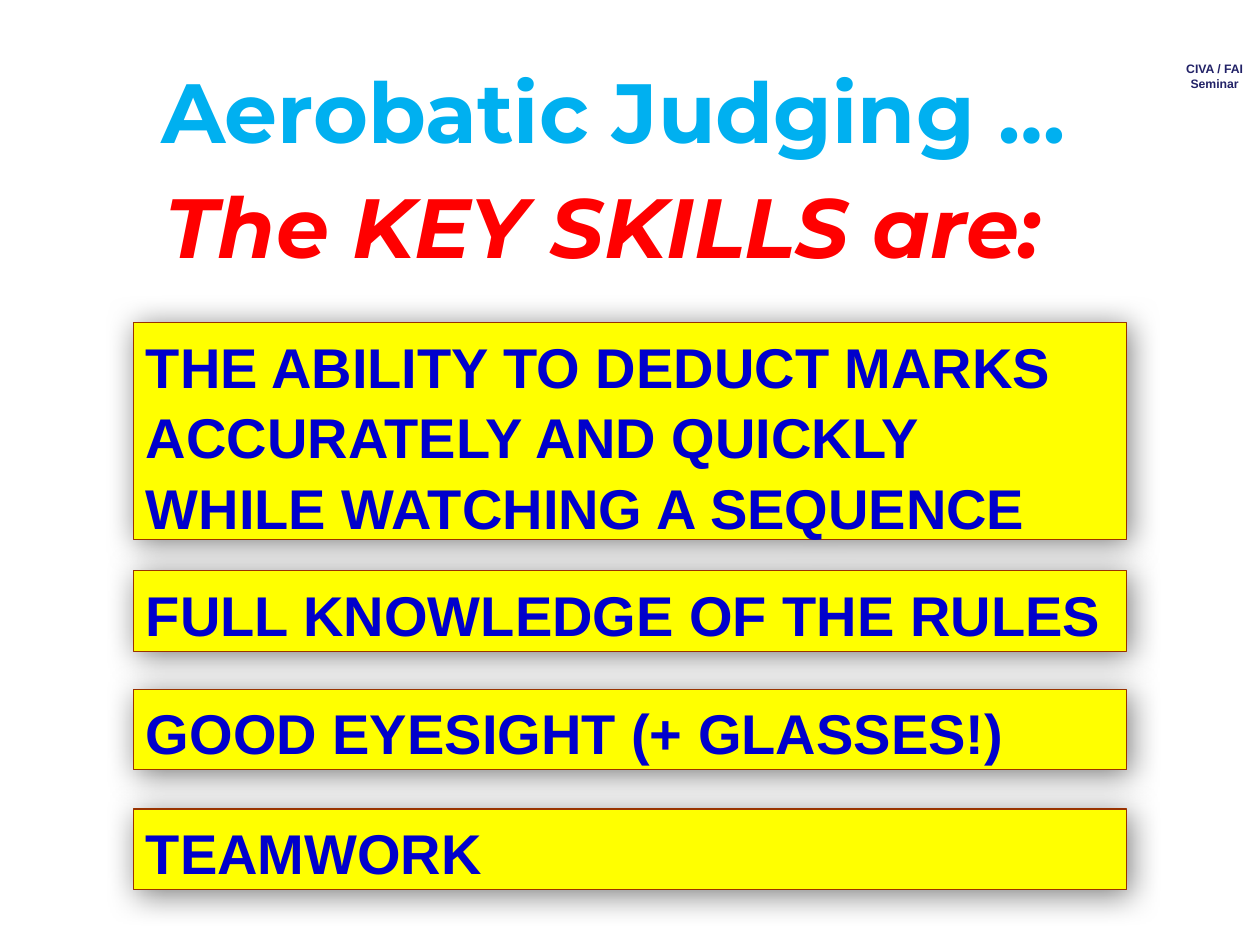
from lxml import etree
from pptx import Presentation
from pptx.dml.color import RGBColor
from pptx.enum import shapes, text
from pptx.oxml.ns import qn
from pptx.util import Inches, Pt

COLORS = {
    "heading": "00B0F0",
    "subheading": "FF0000",
    "panel": "FFFF00",
    "border": "993300",
    "skill": "0000CC",
    "shadow": "808080",
    "seminar": "222267",
    "seminar_shadow": "C0C0C0",
}


def rgb(name):
    return RGBColor.from_string(COLORS[name])


def style(paragraph, size, color, face="Arial", italic=False):
    font = paragraph.font
    font.name, font.size, font.bold, font.italic = face, Pt(size), True, italic
    font.color.rgb = rgb(color)


def add_shadow(properties, color, blur, distance):
    for effects in properties.findall(qn("a:effectLst")):
        properties.remove(effects)
    effects = etree.Element(qn("a:effectLst"))
    shadow = etree.SubElement(effects, qn("a:outerShdw"), blurRad=str(Pt(blur)),
                              dist=str(Pt(distance)), dir=str(45 * 60000),
                              algn="ctr", rotWithShape="0")
    etree.SubElement(shadow, qn("a:srgbClr"), val=COLORS[color])
    properties.append(effects)


def add_heading(slide, box, words, color, italic=False):
    frame = slide.shapes.add_textbox(*map(Inches, box)).text_frame
    frame.word_wrap = True
    frame.vertical_anchor = text.MSO_ANCHOR.MIDDLE
    heading = frame.paragraphs[0]
    heading.text = words
    heading.alignment = text.PP_ALIGN.CENTER
    style(heading, 48, color, "Montserrat", italic)


def add_seminar_label(slide, box):
    frame = slide.shapes.add_textbox(*map(Inches, box)).text_frame
    frame.word_wrap = False
    frame.text = "CIVA / FAI\nSeminar"
    for line in frame.paragraphs:
        line.alignment = text.PP_ALIGN.CENTER
        style(line, 7, "seminar")
        for run in line.runs:
            add_shadow(run.font._element, "seminar_shadow", 1, 1.5)


def add_skill(slide, box, words):
    panel = slide.shapes.add_shape(shapes.MSO_SHAPE.RECTANGLE, *map(Inches, box))
    panel.fill.solid()
    panel.fill.fore_color.rgb = rgb("panel")
    panel.line.color.rgb = rgb("border")
    panel.line.width = Pt(0.75)
    add_shadow(panel._element.spPr, "shadow", 18, 2.8)
    frame = panel.text_frame
    frame.word_wrap = True
    frame.vertical_anchor = text.MSO_ANCHOR.TOP
    frame.margin_right = Inches(0.15)
    skill = frame.paragraphs[0]
    skill.text = words
    skill.alignment = text.PP_ALIGN.LEFT
    skill.line_spacing = 1.05
    style(skill, 32, "skill")


def main():
    deck = Presentation()
    deck.slide_width, deck.slide_height = Inches(10), Inches(7.5)
    slide = deck.slides.add_slide(deck.slide_layouts[6])

    add_seminar_label(slide, (9.3, 0.44, 0.68, 0.34))
    add_heading(slide, (0.59, 1.16, 8.4, 1.25), "The KEY SKILLS are:", "subheading", True)
    skills = [
        (2.56, 1.72, "THE ABILITY TO DEDUCT MARKS ACCURATELY AND QUICKLY WHILE WATCHING A SEQUENCE"),
        (4.53, 0.64, "FULL KNOWLEDGE OF THE RULES"),
        (5.47, 0.64, "GOOD EYESIGHT (+ GLASSES!)"),
        (6.42, 0.64, "TEAMWORK"),
    ]
    for top, height, words in skills:
        add_skill(slide, (1.06, top, 7.88, height), words)
    add_heading(slide, (0.77, 0.25, 8.2, 1.25), "Aerobatic Judging …", "heading")

    deck.save("out.pptx")


if __name__ == "__main__":
    main()
